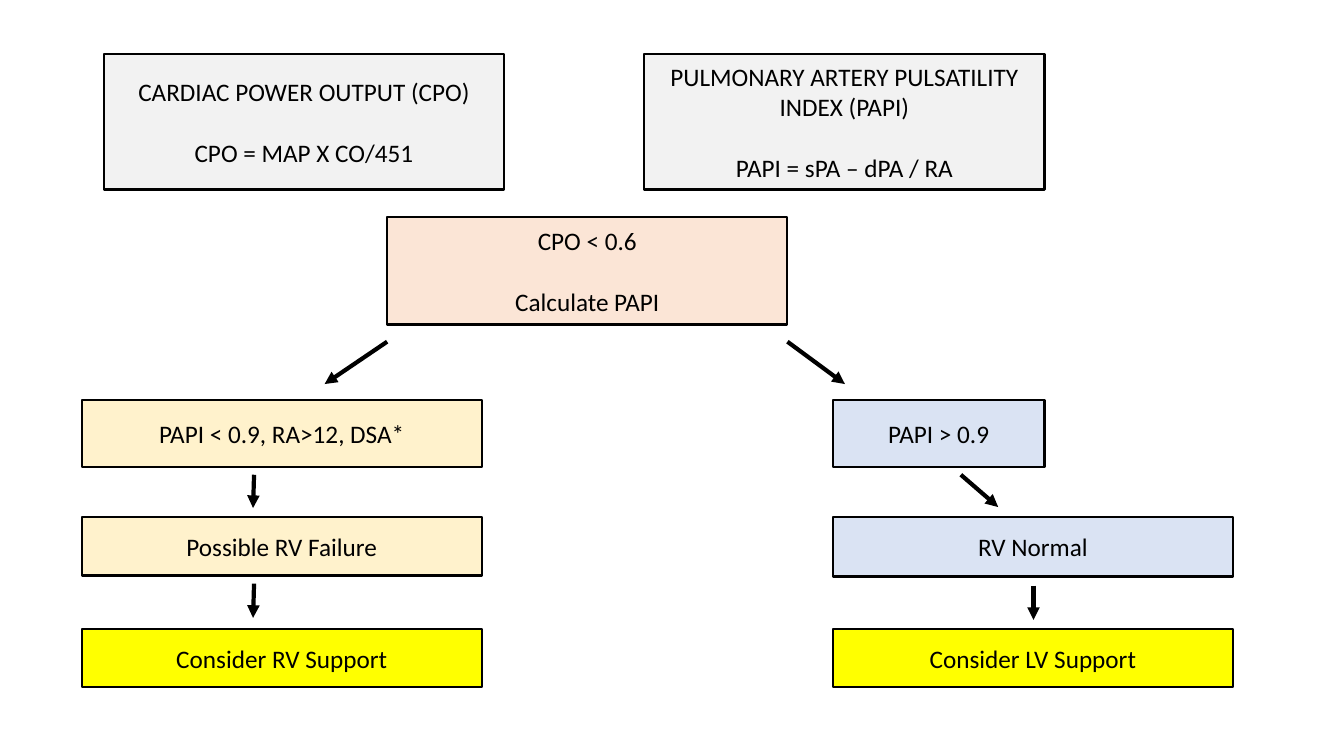
from pptx import Presentation
from pptx.dml.color import RGBColor
from pptx.enum.shapes import MSO_CONNECTOR as Connector, MSO_SHAPE as Shape
from pptx.enum.text import MSO_ANCHOR as Anchor, PP_ALIGN as Align
from pptx.oxml.ns import qn
from pptx.util import Pt
from lxml.etree import SubElement

EMU_PER_PX = 9144
COLORS = {
    "ink": "000000",
    "formula": "F2F2F2",
    "decision": "FBE5D6",
    "failure": "FFF2CC",
    "normal": "DAE3F3",
    "support": "FFFF00",
}


def px(length):
    return length * EMU_PER_PX


class Flowchart:
    """Draws the boxes and arrows of a flowchart on one slide."""

    font_name = "Calibri"
    font_size = Pt(18)
    line_gap = Pt(22)

    def __init__(self, slide):
        self.slide = slide

    def color(self, name):
        return RGBColor.from_string(COLORS[name])

    def box(self, left, top, width, height, fill, *lines):
        shape = self.slide.shapes.add_shape(
            Shape.RECTANGLE, px(left), px(top), px(width), px(height))
        shape.shadow.inherit = False
        shape.fill.solid()
        shape.fill.fore_color.rgb = self.color(fill)
        shape.line.color.rgb = self.color("ink")
        shape.line.width = Pt(1.5)
        frame = shape.text_frame
        frame.word_wrap = True
        frame.vertical_anchor = Anchor.MIDDLE
        for index, text in enumerate(lines):
            paragraph = frame.add_paragraph() if index else frame.paragraphs[0]
            paragraph.alignment = Align.CENTER
            if index:
                paragraph.space_before = self.line_gap
            run = paragraph.add_run()
            run.text = text
            run.font.name = self.font_name
            run.font.size = self.font_size
            run.font.color.rgb = self.color("ink")

    def arrow(self, x1, y1, x2, y2):
        connector = self.slide.shapes.add_connector(
            Connector.STRAIGHT, px(x1), px(y1), px(x2), px(y2))
        connector.line.color.rgb = self.color("ink")
        connector.line.width = Pt(3)
        SubElement(connector.line._get_or_add_ln(), qn("a:tailEnd"), type="triangle")
        SubElement(connector._element.spPr, qn("a:effectLst"))


def main():
    presentation = Presentation()
    presentation.slide_width = px(1333)
    presentation.slide_height = px(750)
    slide = presentation.slides.add_slide(presentation.slide_layouts[6])
    chart = Flowchart(slide)

    wide, left, right = 397, 81, 826
    chart.box(103, 54, wide, 134, "formula",
              "CARDIAC POWER OUTPUT (CPO)", "CPO = MAP X CO/451")
    chart.box(639, 54, wide, 134, "formula",
              "PULMONARY ARTERY PULSATILITY INDEX (PAPI)", "PAPI = sPA – dPA / RA")
    chart.box(384, 215, wide, 107, "decision", "CPO < 0.6", "Calculate PAPI")

    chart.box(left, 397, wide, 66, "failure", "PAPI < 0.9, RA>12, DSA*")
    chart.box(left, 513, wide, 58, "failure", "Possible RV Failure")
    chart.box(left, 624, wide, 58, "support", "Consider RV Support")

    chart.box(right, 397, 210, 66, "normal", "PAPI > 0.9")
    chart.box(right, 513, wide, 59, "normal", "RV Normal")
    chart.box(right, 624, wide, 58, "support", "Consider LV Support")

    for ends in [
        (384, 339, 322, 381),
        (781, 339, 838, 381),
        (252, 471, 251, 504),
        (252, 579, 251, 613),
        (953, 471, 990, 503),
        (1025, 581, 1025, 615),
    ]:
        chart.arrow(*ends)

    presentation.save("out.pptx")


if __name__ == "__main__":
    main()
